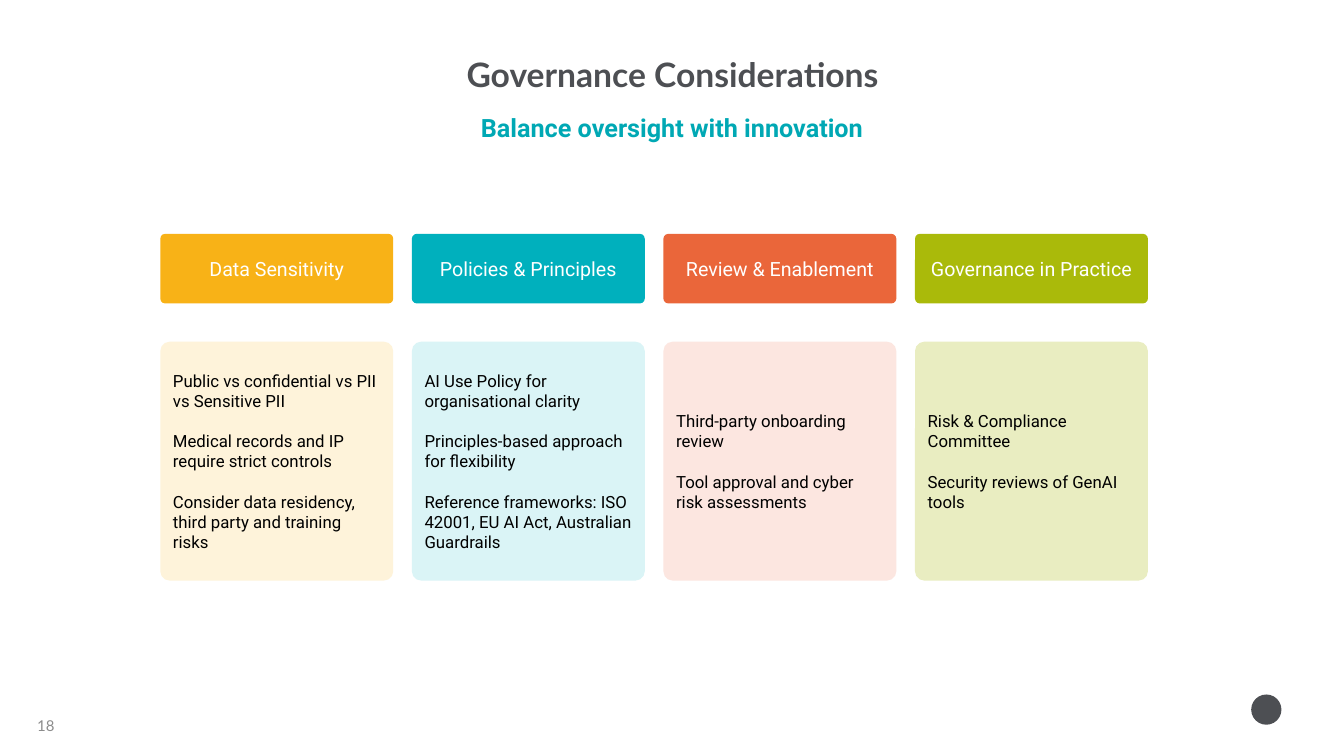
from pptx import Presentation
from pptx.dml.color import RGBColor
from pptx.enum.shapes import MSO_SHAPE
from pptx.enum.text import MSO_ANCHOR, PP_ALIGN
from pptx.util import Inches, Pt

CHARCOAL = RGBColor(0x4D, 0x4F, 0x53)
GREY = RGBColor(0x8C, 0x8C, 0x8C)
TEAL_TEXT = RGBColor(0x00, 0xA8, 0xB4)
WHITE = RGBColor(0xFF, 0xFF, 0xFF)
BLACK = RGBColor(0x00, 0x00, 0x00)
AMBER = RGBColor(0xF8, 0xB2, 0x17)
PALE_AMBER = RGBColor(0xFE, 0xF3, 0xDA)
TEAL = RGBColor(0x00, 0xB0, 0xBD)
PALE_TEAL = RGBColor(0xDA, 0xF4, 0xF6)
ORANGE = RGBColor(0xEA, 0x66, 0x3A)
PALE_ORANGE = RGBColor(0xFC, 0xE6, 0xE0)
GREEN = RGBColor(0xAA, 0xBA, 0x0A)
PALE_GREEN = RGBColor(0xE9, 0xED, 0xC1)

COLUMN_LEFT = 1.59
COLUMN_PITCH = 2.495
COLUMN_WIDTH = 2.31

COLUMNS = [
    ("Data Sensitivity", AMBER, PALE_AMBER, [
        "Public vs confidential vs PII vs Sensitive PII",
        "Medical records and IP require strict controls",
        "Consider data residency, third party and training risks",
    ]),
    ("Policies & Principles", TEAL, PALE_TEAL, [
        "AI Use Policy for organisational clarity",
        "Principles-based approach for flexibility",
        "Reference frameworks: ISO 42001, EU AI Act, Australian Guardrails",
    ]),
    ("Review & Enablement", ORANGE, PALE_ORANGE, [
        "Third-party onboarding review",
        "Tool approval and cyber risk assessments",
    ]),
    ("Governance in Practice", GREEN, PALE_GREEN, [
        "Risk & Compliance Committee",
        "Security reviews of GenAI tools",
    ]),
]


def write(frame, lines, size, font, color, align=PP_ALIGN.LEFT, bold=False, gap=0):
    frame.word_wrap = True
    for index, line in enumerate(lines):
        para = frame.add_paragraph() if index else frame.paragraphs[0]
        para.alignment = align
        para.space_before = Pt(gap if index else 0)
        span = para.add_run()
        span.text = line
        span.font.size = Pt(size)
        span.font.name = font
        span.font.bold = bold
        span.font.color.rgb = color


def add_label(page, left, top, width, height, text, size, font, color, **style):
    box = page.shapes.add_textbox(Inches(left), Inches(top), Inches(width), Inches(height))
    write(box.text_frame, [text], size, font, color, **style)
    return box.text_frame


def add_filled(page, kind, left, top, width, height, fill):
    shape = page.shapes.add_shape(
        kind, Inches(left), Inches(top), Inches(width), Inches(height))
    shape.shadow.inherit = False
    shape.fill.solid()
    shape.fill.fore_color.rgb = fill
    shape.line.fill.background()
    return shape


def add_card(page, left, top, height, rounding, fill, lines, size, color, align, gap=0):
    card = add_filled(page, MSO_SHAPE.ROUNDED_RECTANGLE, left, top, COLUMN_WIDTH, height, fill)
    card.adjustments[0] = rounding
    card.text_frame.vertical_anchor = MSO_ANCHOR.MIDDLE
    write(card.text_frame, lines, size, "Roboto", color, align, gap=gap)


def main():
    deck = Presentation()
    deck.slide_width = Inches(13.33)
    deck.slide_height = Inches(7.5)
    page = deck.slides.add_slide(deck.slide_layouts[6])

    add_filled(page, MSO_SHAPE.OVAL, 12.41, 6.89, 0.3, 0.3, CHARCOAL)

    title = add_label(page, 0.67, 0.58, 12, 0.4, "Governance Considerations",
                      24, "Lato", CHARCOAL, align=PP_ALIGN.CENTER, bold=True)
    title.margin_left = title.margin_right = title.margin_top = title.margin_bottom = 0
    title.paragraphs[0].line_spacing = 0.9

    add_label(page, 2.03, 1.07, 9.27, 0.4, "Balance oversight with innovation",
              18, "Roboto", TEAL_TEXT, align=PP_ALIGN.CENTER, bold=True)

    number = add_label(page, 0.27, 7.07, 3.11, 0.25, "18", 10.7, "Lato", GREY)
    number.vertical_anchor = MSO_ANCHOR.MIDDLE

    for index, (heading, strong, pale, points) in enumerate(COLUMNS):
        left = COLUMN_LEFT + index * COLUMN_PITCH
        add_card(page, left, 2.32, 0.69, 0.07, strong, [heading], 14, WHITE, PP_ALIGN.CENTER)
        add_card(page, left, 3.39, 2.37, 0.04, pale, points, 12, BLACK, PP_ALIGN.LEFT, gap=14.4)

    deck.save("out.pptx")


if __name__ == "__main__":
    main()
